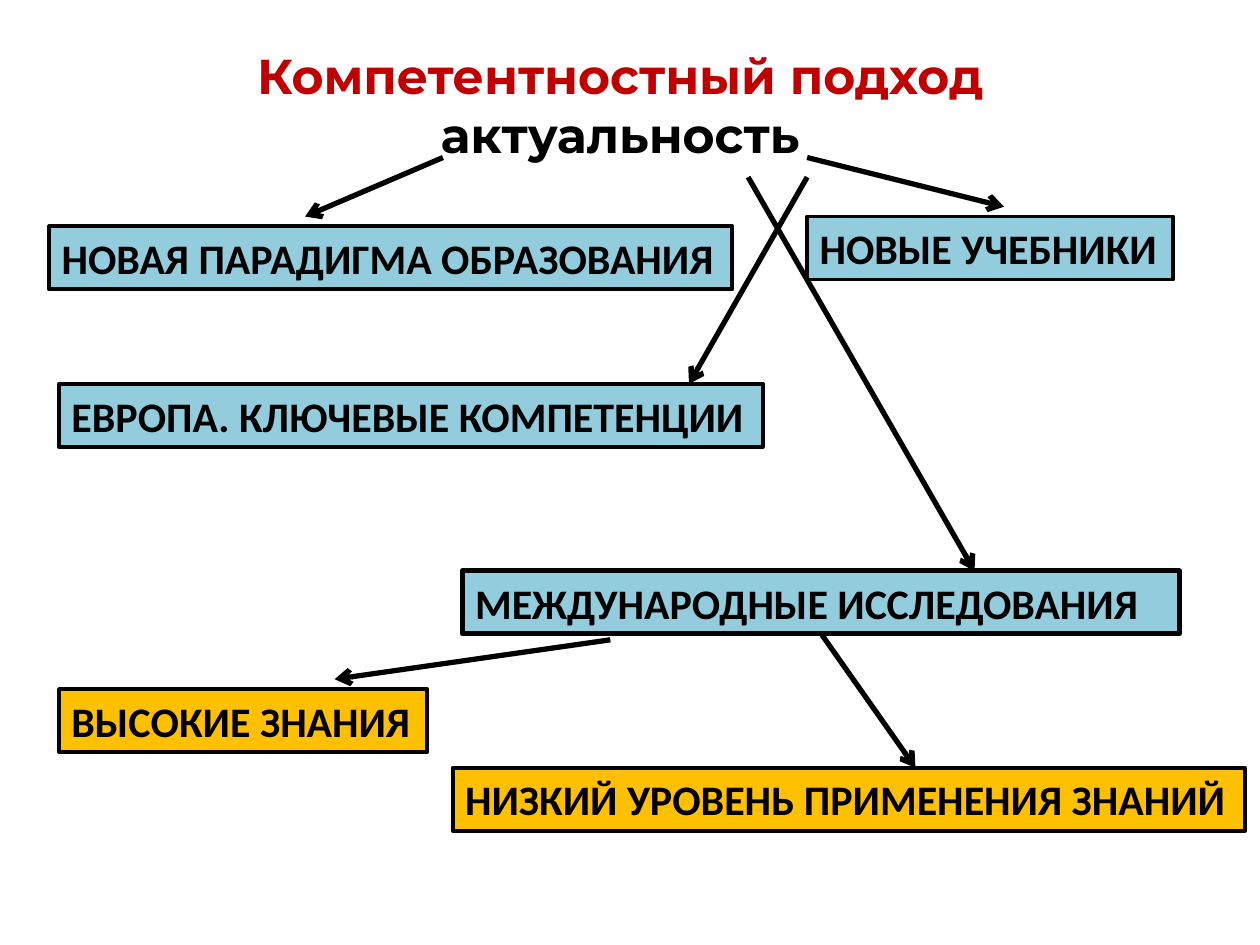
"""Build a slide mapping why the competence-based approach matters."""
from lxml.etree import SubElement
from pptx import Presentation
from pptx.dml.color import RGBColor
from pptx.enum.shapes import MSO_CONNECTOR
from pptx.enum.text import MSO_ANCHOR, MSO_AUTO_SIZE, PP_ALIGN
from pptx.oxml.ns import qn
from pptx.util import Inches, Pt

BLACK = RGBColor(0x00, 0x00, 0x00)
RED = RGBColor(0xC0, 0x00, 0x00)
BLUE = RGBColor(0x93, 0xCD, 0xDD)
AMBER = RGBColor(0xFF, 0xC0, 0x00)

deck = Presentation()
deck.slide_width, deck.slide_height = Inches(10), Inches(7.5)
page = deck.slides.add_slide(deck.slide_layouts[5])
UNIT = deck.slide_width / 128
BOX_ROWS = 6.4


def grid(*counts):
    return [round(count * UNIT) for count in counts]


def write(para, text, **formats):
    span = para.add_run()
    span.text = text
    span.font.color.rgb = formats.pop("color")
    for name, value in formats.items():
        setattr(span.font, name, value)


title = page.shapes.title
title.left, title.top, title.width, title.height = grid(3, 4, 120, 13.3)
frame = title.text_frame
frame.word_wrap = True
frame.auto_size = MSO_AUTO_SIZE.SHAPE_TO_FIT_TEXT
frame.vertical_anchor = MSO_ANCHOR.MIDDLE
heading = {"name": "Montserrat", "size": Pt(28), "bold": True}
for para, text, color in (
    (frame.paragraphs[0], "Компетентностный подход", RED),
    (frame.add_paragraph(), "актуальность", BLACK),
):
    para.alignment = PP_ALIGN.CENTER
    write(para, text, color=color, **heading)

label = {"name": "Calibri", "size": Pt(24), "bold": True, "color": BLACK}
for text, column, row, columns, fill, weight in (
    ("НОВАЯ ПАРАДИГМА ОБРАЗОВАНИЯ", 5, 23, 69.4, BLUE, 2.25),
    ("НОВЫЕ УЧЕБНИКИ", 82, 22, 37.2, BLUE, 2.25),
    ("ЕВРОПА. КЛЮЧЕВЫЕ КОМПЕТЕНЦИИ", 6, 39, 71.5, BLUE, 2.25),
    ("МЕЖДУНАРОДНЫЕ ИССЛЕДОВАНИЯ", 47, 58, 72.8, BLUE, 3),
    ("ВЫСОКИЕ ЗНАНИЯ", 6, 70, 37.4, AMBER, 2.25),
    ("НИЗКИЙ УРОВЕНЬ ПРИМЕНЕНИЯ ЗНАНИЙ", 46, 78, 80.5, AMBER, 2.25),
):
    box = page.shapes.add_textbox(*grid(column, row, columns, BOX_ROWS))
    box.fill.solid()
    box.fill.fore_color.rgb = fill
    box.line.color.rgb = BLACK
    box.line.width = Pt(weight)
    box.text_frame.word_wrap = True
    box.text_frame.auto_size = MSO_AUTO_SIZE.SHAPE_TO_FIT_TEXT
    write(box.text_frame.paragraphs[0], text, **label)

for ends in (
    (45, 16, 31, 22),
    (82, 16, 102, 21),
    (76, 18, 99, 58),
    (82, 18, 70, 39),
    (62, 65, 34, 69),
    (83.5, 64.5, 93, 78),
):
    arrow = page.shapes.add_connector(MSO_CONNECTOR.STRAIGHT, *grid(*ends))
    arrow.line.color.rgb = BLACK
    arrow.line.width = Pt(3)
    SubElement(arrow.line._get_or_add_ln(), qn("a:tailEnd"), type="arrow")
    SubElement(arrow._element.spPr, qn("a:effectLst"))

deck.save("out.pptx")
